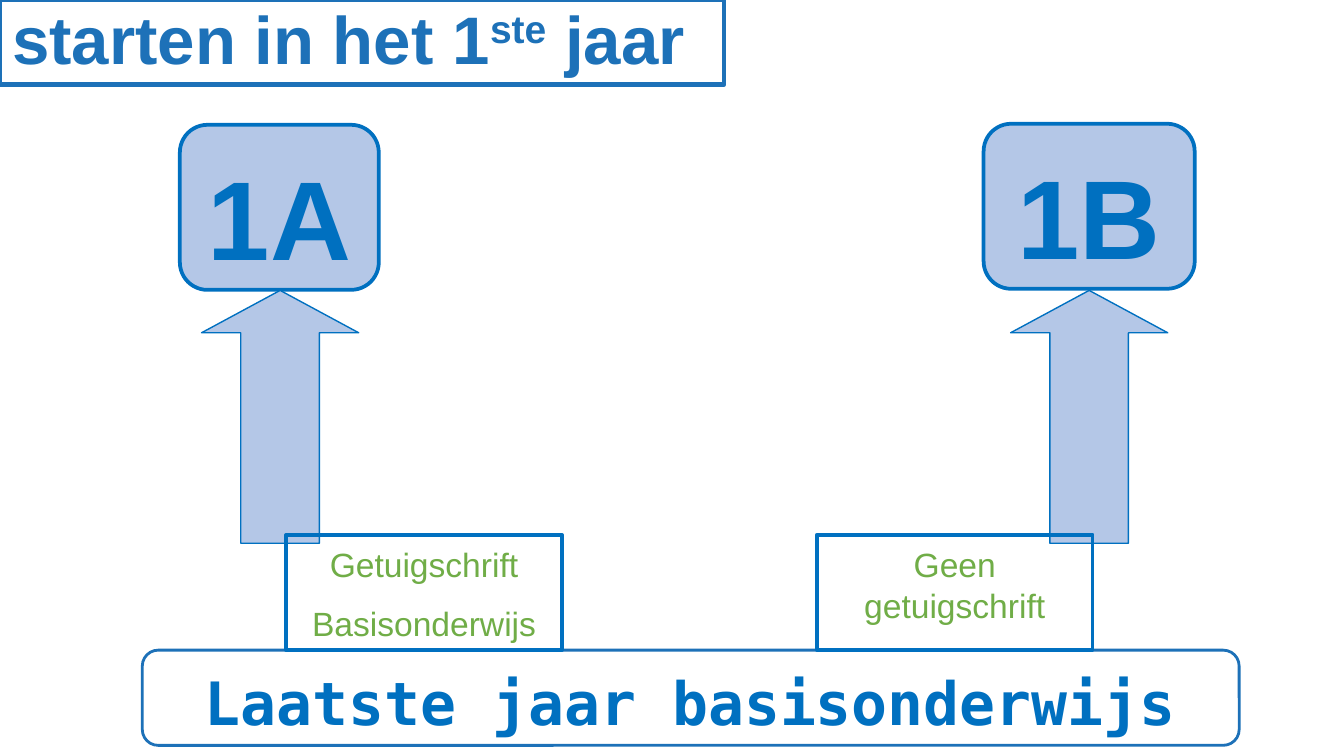
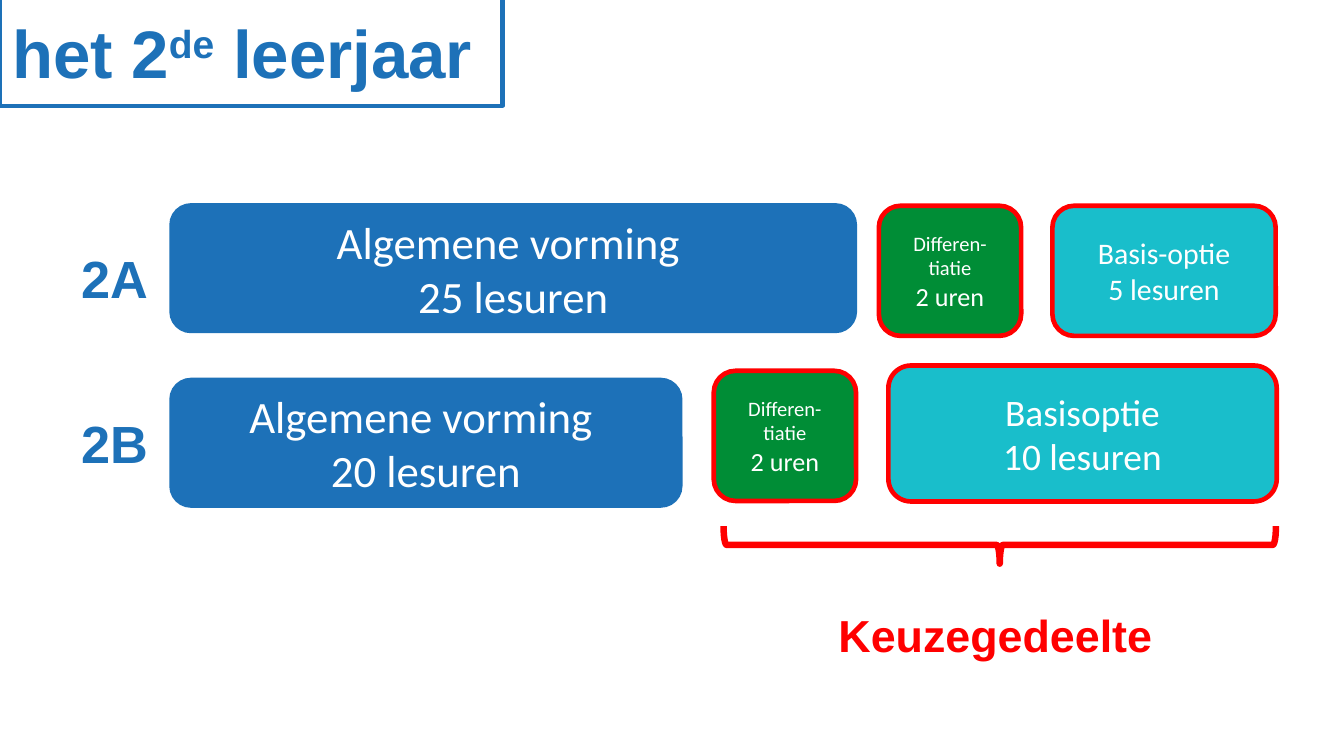
import pptx
import pptx.dml.color
import pptx.enum.shapes
import pptx.enum.text
import pptx.util

Cm = pptx.util.Cm
Pt = pptx.util.Pt
SHAPE = pptx.enum.shapes.MSO_SHAPE
ALIGN = pptx.enum.text.PP_ALIGN
ANCHOR = pptx.enum.text.MSO_ANCHOR

TITLE_BLUE, LINE_BLUE, PALE_BLUE = "1D71B8", "0070C0", "B4C7E7"
LEAF, GREEN, TEAL, RED, WHITE = "70AD47", "008D36", "19BECB", "FF0000", "FFFFFF"


def rgb(color):
    return pptx.dml.color.RGBColor.from_string(color)


def apply(target, values):
    for name, value in values.items():
        setattr(target, name, value)


class Deck:
    def __init__(self):
        self.presentation = pptx.Presentation()
        apply(self.presentation, {"slide_width": Cm(25.4), "slide_height": Cm(14.29)})
        self.slide = None

    def new_slide(self):
        self.slide = self.presentation.slides.add_slide(self.presentation.slide_layouts[6])

    def shape(self, kind, box, fill=None, line=None, width=2):
        """Draw a preset shape; box is left, top, width, height in cm."""
        shape = self.slide.shapes.add_shape(kind, *map(Cm, box))
        shape.shadow.inherit = False
        if fill:
            shape.fill.solid()
            shape.fill.fore_color.rgb = rgb(fill)
        else:
            shape.fill.background()
        if line:
            shape.line.color.rgb = rgb(line)
            shape.line.width = Pt(width)
        else:
            shape.line.fill.background()
        return shape

    def format_run(self, run, color, size, face="Arial", bold=False):
        apply(run.font, {"name": face, "size": Pt(size), "bold": bold})
        run.font.color.rgb = rgb(color)

    def add_lines(self, shape, lines, color, sizes, face="Arial", bold=False,
                  align=ALIGN.CENTER, anchor=ANCHOR.TOP, gap=0, top=0.13):
        """Fill a shape with one paragraph per line, each with its own size."""
        frame = shape.text_frame
        apply(frame, {"word_wrap": True, "vertical_anchor": anchor, "margin_top": Cm(top)})
        for index, (line, size) in enumerate(zip(lines, sizes)):
            paragraph = frame.add_paragraph() if index else frame.paragraphs[0]
            apply(paragraph, {"text": line, "alignment": align,
                              "space_before": Pt(gap if index else 0)})
            for run in paragraph.runs:
                self.format_run(run, color, size, face, bold)

    def title(self, box, start, ordinal, end, spacing=1.0):
        shape = self.shape(SHAPE.RECTANGLE, box, line=TITLE_BLUE, width=2.25)
        apply(shape.text_frame, {
            "word_wrap": True, "vertical_anchor": ANCHOR.MIDDLE,
            "margin_left": Cm(0.23), "margin_right": Cm(0.23),
            "margin_top": Cm(0.1), "margin_bottom": Cm(0.1)})
        paragraph = shape.text_frame.paragraphs[0]
        apply(paragraph, {"alignment": ALIGN.LEFT, "line_spacing": spacing})
        for text, raised in ((start, False), (ordinal, True), (end, False)):
            run = paragraph.add_run()
            run.text = text
            self.format_run(run, TITLE_BLUE, 36, bold=True)
            if raised:
                run._r.get_or_add_rPr().set("baseline", "30000")

    def label(self, box, text, color, size, align=ALIGN.LEFT):
        textbox = self.slide.shapes.add_textbox(*map(Cm, box))
        self.add_lines(textbox, [text], color, [size], bold=True, align=align)

    def stream(self, box, name):
        block = self.shape(SHAPE.ROUNDED_RECTANGLE, box, PALE_BLUE, LINE_BLUE)
        self.add_lines(block, [name], LINE_BLUE, [60], bold=True, top=0.3)

    def arrow(self, left):
        arrow = self.shape(SHAPE.UP_ARROW, (left, 5.49, 2.97, 4.78), PALE_BLUE, LINE_BLUE, 0.75)
        arrow.adjustments[1] = 0.27

    def certificate(self, left, lines):
        block = self.shape(SHAPE.RECTANGLE, (left, 10.11, 5.21, 2.18), line=LINE_BLUE)
        self.add_lines(block, lines, LEAF, [18] * len(lines), gap=10, top=0.18)

    def lessons(self, box, lines, sizes, fill, line=None):
        block = self.shape(SHAPE.ROUNDED_RECTANGLE, box, fill, line, 2.5)
        self.add_lines(block, lines, WHITE, sizes, "Calibri", anchor=ANCHOR.MIDDLE)


def first_year(deck):
    deck.new_slide()
    deck.stream((3.4, 2.36, 3.76, 3.12), "1A")
    primary = deck.shape(SHAPE.ROUNDED_RECTANGLE, (2.69, 12.29, 20.73, 1.8),
                         line=TITLE_BLUE, width=1.5)
    deck.add_lines(primary, ["Laatste jaar basisonderwijs"], LINE_BLUE, [32],
                   "DejaVu Sans Mono", bold=True, top=0.21)
    for left in (3.81, 19.1):
        deck.arrow(left)
    deck.stream((18.59, 2.34, 3.99, 3.12), "1B")
    deck.certificate(5.41, ["Getuigschrift", "Basisonderwijs"])
    deck.certificate(15.44, ["Geen getuigschrift"])
    deck.title((0, 0, 13.69, 1.6), "starten in het 1", "ste", " jaar", 0.9)


def second_year(deck):
    deck.new_slide()
    deck.title((0, -0.03, 9.5, 2.03), "het 2", "de", " leerjaar")
    for top, width, hours in ((7.14, 9.7, 20), (3.84, 13, 25)):
        deck.lessons((3.2, top, width, 2.46), [f"Algemene vorming \v{hours} lesuren"],
                     [24], TITLE_BLUE)
    for left, top in ((16.61, 3.89), (13.49, 7.01)):
        deck.lessons((left, top, 2.69, 2.46), ["Differen-tiatie", "2 uren"],
                     [11, 14], GREEN, RED)
    deck.lessons((19.89, 3.89, 4.22, 2.46), ["Basis-optie", "5 lesuren"], [16, 16], TEAL, RED)
    deck.lessons((16.79, 6.91, 7.34, 2.57), ["Basisoptie", "10 lesuren"], [20, 20], TEAL, RED)
    for top, name in ((4.52, "2A"), (7.65, "2B")):
        deck.label((1.3, top, 2.67, 1.45), name, TITLE_BLUE, 28)
    brace = deck.shape(SHAPE.LEFT_BRACE, (18.54, 5.08, 0.71, 10.44), line=RED, width=3.5)
    brace.rotation = 270
    deck.label((14.76, 11.35, 8.1, 1.04), "Keuzegedeelte", RED, 24, ALIGN.CENTER)


def main():
    deck = Deck()
    first_year(deck)
    second_year(deck)
    deck.presentation.save("out.pptx")


if __name__ == "__main__":
    main()
